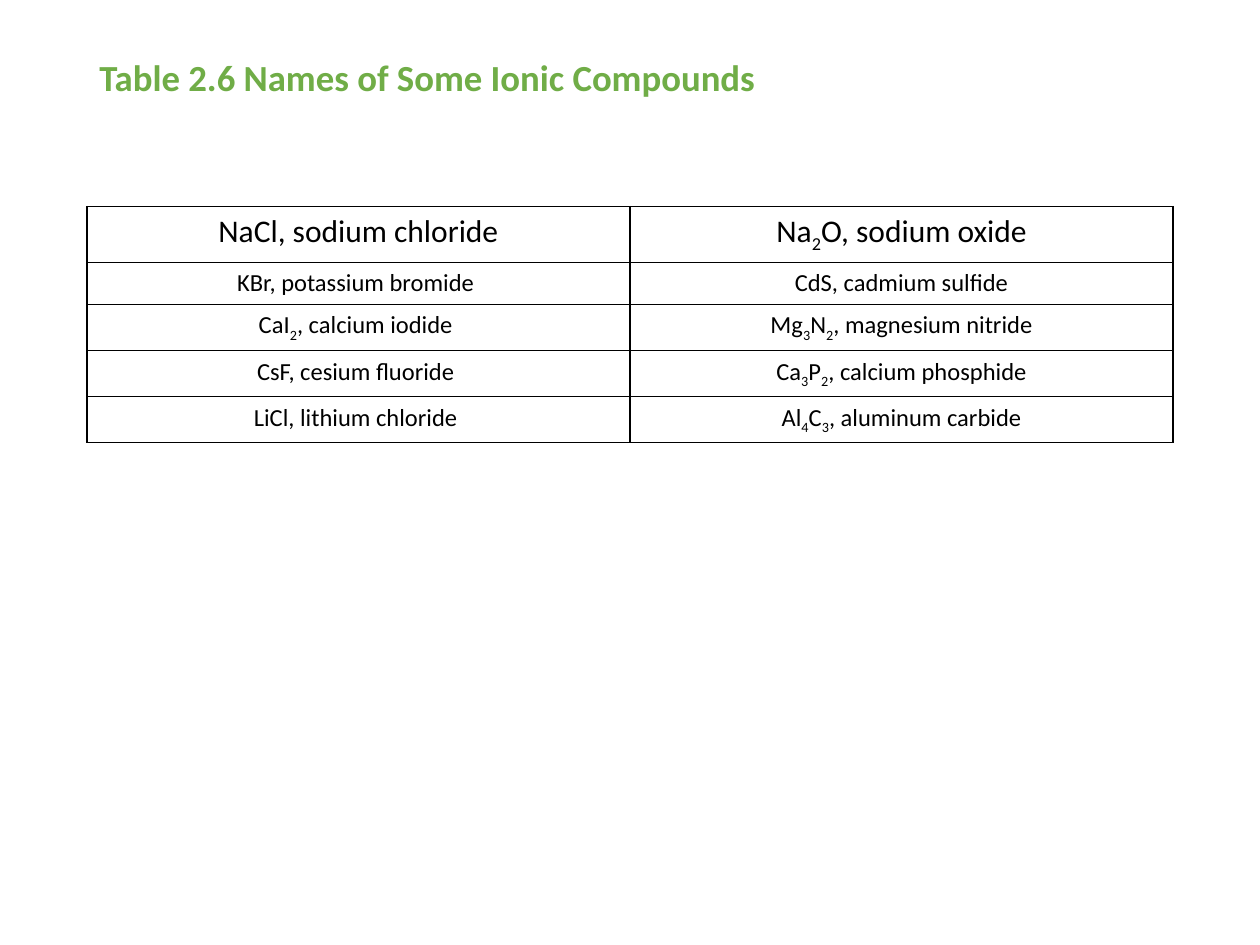
from itertools import groupby

from lxml import etree
from pptx import Presentation
from pptx import util as u
from pptx.dml.color import RGBColor
from pptx.enum import text
from pptx.oxml.ns import qn

COLORS = {"title": "70AD47", "ink": "000000"}
FONT = "Calibri"
COMPOUNDS = [
    ("NaCl, sodium chloride", "Na2O, sodium oxide"),
    ("KBr, potassium bromide ", "CdS, cadmium sulfide"),
    ("CaI2, calcium iodide ", "Mg3N2, magnesium nitride"),
    ("CsF, cesium fluoride ", "Ca3P2, calcium phosphide"),
    ("LiCl, lithium chloride ", "Al4C3, aluminum carbide"),
]


def add_run(p, words, size, color, bold=False):
    r = p.add_run()
    r.text = words
    r.font.name = FONT
    r.font.size = u.Pt(size)
    r.font.bold = bold
    r.font.color.rgb = RGBColor.from_string(COLORS[color])
    return r


def add_formula(p, words, size):
    for is_digit, chars in groupby(words, str.isdigit):
        r = add_run(p, "".join(chars), size, "ink")
        if is_digit:
            r.font._element.set("baseline", "-25000")


def add_borders(cell):
    tc_pr = cell._tc.get_or_add_tcPr()
    for side in ("lnL", "lnR", "lnT", "lnB"):
        ln = etree.SubElement(tc_pr, qn(f"a:{side}"), w=str(u.Pt(1)))
        fill = etree.SubElement(ln, qn("a:solidFill"))
        etree.SubElement(fill, qn("a:srgbClr"), val=COLORS["ink"])


def add_title(s, words):
    box = s.shapes.add_textbox(u.Inches(0.69), u.Inches(0.4), u.Inches(8.62), u.Inches(0.46))
    tf = box.text_frame
    tf.word_wrap = True
    tf.vertical_anchor = text.MSO_ANCHOR.MIDDLE
    p = tf.paragraphs[0]
    p.line_spacing = 0.9
    add_run(p, words, 21, "title", bold=True)


def add_compound_table(s):
    row_height = u.Inches(0.31)
    table = s.shapes.add_table(
        len(COMPOUNDS), 2, u.Inches(0.69), u.Inches(1.64),
        u.Inches(8.62), row_height * len(COMPOUNDS),
    ).table
    table.first_row = False
    table.horz_banding = False
    for i, names in enumerate(COMPOUNDS):
        table.rows[i].height = row_height
        for j, name in enumerate(names):
            cell = table.cell(i, j)
            add_borders(cell)
            cell.fill.background()
            p = cell.text_frame.paragraphs[0]
            p.alignment = text.PP_ALIGN.CENTER
            add_formula(p, name, 18 if i == 0 else 14)


def main():
    prs = Presentation()
    prs.slide_width = u.Inches(10)
    prs.slide_height = u.Inches(7.5)
    s = prs.slides.add_slide(prs.slide_layouts[6])
    add_title(s, "Table 2.6 Names of Some Ionic Compounds")
    add_compound_table(s)
    prs.save("out.pptx")


if __name__ == "__main__":
    main()
